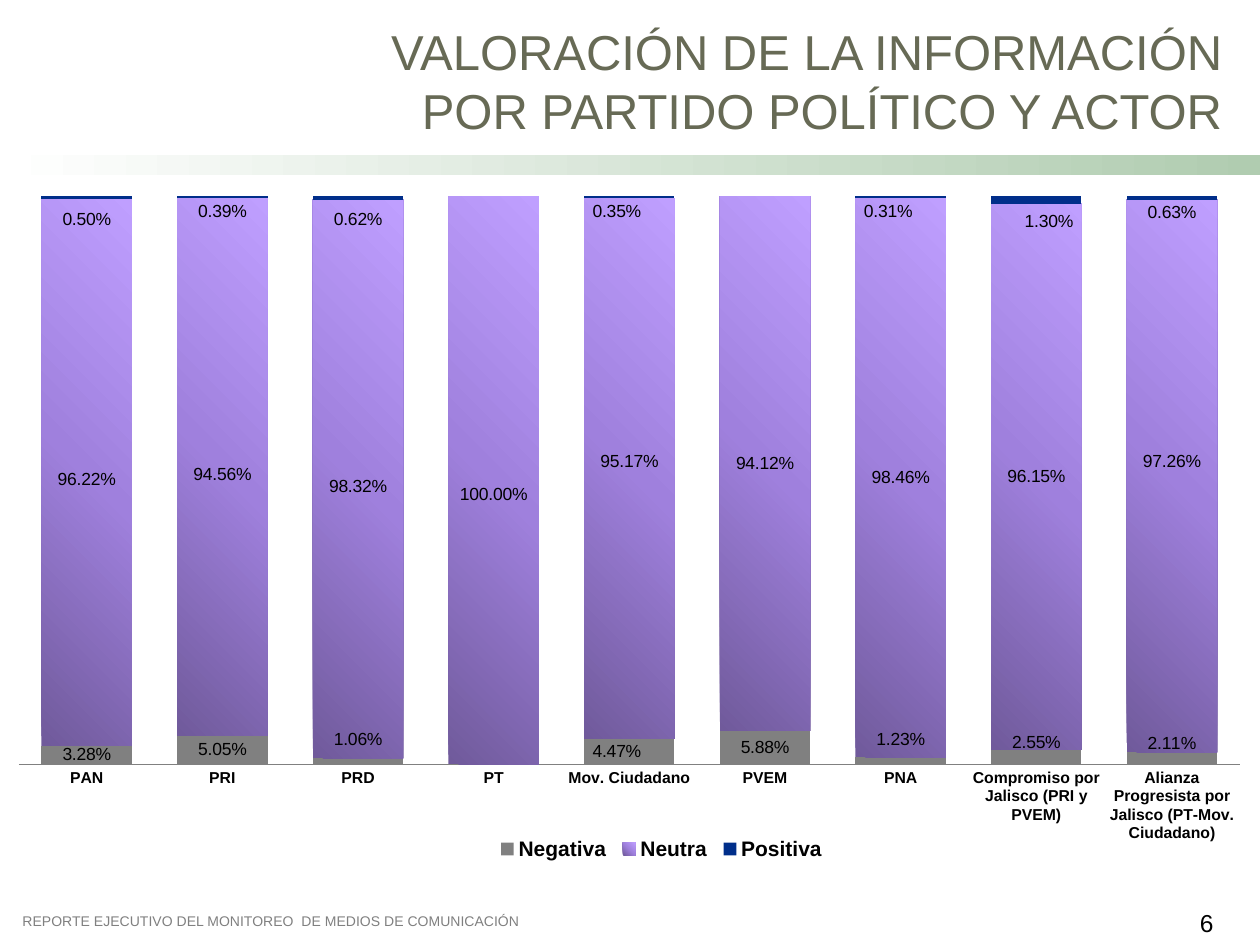
from lxml import etree
from pptx import Presentation
from pptx.chart.data import CategoryChartData
from pptx.dml.color import RGBColor
from pptx.enum.chart import XL_CHART_TYPE, XL_LEGEND_POSITION, XL_TICK_MARK
from pptx.enum.shapes import MSO_SHAPE
from pptx.enum.text import MSO_ANCHOR, PP_ALIGN
from pptx.oxml.ns import qn
from pptx.util import Inches, Pt

STACKED = XL_CHART_TYPE.COLUMN_STACKED_100
BOTTOM = XL_LEGEND_POSITION.BOTTOM
NO_TICK = XL_TICK_MARK.NONE
RECT = MSO_SHAPE.RECTANGLE
MIDDLE = MSO_ANCHOR.MIDDLE
LEFT, RIGHT = PP_ALIGN.LEFT, PP_ALIGN.RIGHT

FONT = "Arial"
PERCENT = "0.00%"
COLORS = {"title": "676A55", "text": "000000", "gray": "808080", "blue": "002E8A",
          "white": "FFFFFF", "green": "B0CCB0", "dark": "705A9B", "mid": "9F80DD",
          "light": "BF9FFF"}

PARTIES = ["PAN", "PRI", "PRD", "PT", "Mov. Ciudadano", "PVEM", "PNA",
           "Compromiso por Jalisco (PRI y PVEM)",
           "Alianza Progresista por Jalisco (PT-Mov. Ciudadano)"]
RATINGS = {
    "Negativa": [0.0328, 0.0505, 0.0106, None, 0.0447, 0.0588, 0.0123, 0.0255, 0.0211],
    "Neutra": [0.9622, 0.9456, 0.9832, 1, 0.9517, 0.9412, 0.9846, 0.9615, 0.9726],
    "Positiva": [0.005, 0.0039, 0.0062, None, 0.0035, None, 0.0031, 0.013, 0.0063],
}
LABEL_SHIFTS = {
    "Negativa": {2: (0, -0.03), 4: (-0.01, 0), 6: (0, -0.03), 7: (0, -0.02),
                 8: (0, -0.02)},
    "Neutra": {0: (0, 0.01), 1: (0, 0.01), 2: (0, 0.01), 3: (0, 0.02),
               4: (0, -0.01), 8: (0, -0.02)},
    "Positiva": {0: (0, 0.03), 1: (0, 0.02), 2: (0, 0.03), 4: (-0.01, 0.02),
                 6: (-0.01, 0.02), 7: (0.01, 0.03), 8: (0, 0.02)},
}


def rgb(name):
    return RGBColor.from_string(COLORS[name])


def set_layout(parent, after=None, **values):
    for old in parent.findall(qn("c:layout")):
        parent.remove(old)
    layout = etree.Element(qn("c:layout"))
    manual = etree.SubElement(layout, qn("c:manualLayout"))
    for tag, value in values.items():
        etree.SubElement(manual, qn(f"c:{tag}"), val=str(value))
    position = 0 if after is None else parent.index(parent.find(qn(after))) + 1
    parent.insert(position, layout)


class SlideBuilder:
    def __init__(self, slide):
        self.s = slide

    def style(self, font, size, color="text", bold=False):
        font.name, font.size, font.bold = FONT, Pt(size), bold
        font.color.rgb = rgb(color)

    def gradient(self, fill, element, names, angle):
        fill.gradient()
        fill.gradient_angle = angle
        stops = element.xpath(".//a:gsLst")[0]
        for old in list(stops):
            stops.remove(old)
        for i, name in enumerate(names):
            pos = 100000 * i // (len(names) - 1)
            stop = etree.SubElement(stops, qn("a:gs"), pos=str(pos))
            etree.SubElement(stop, qn("a:srgbClr"), val=COLORS[name])

    def title(self, text, *box):
        sp = self.s.shapes.title
        sp.left, sp.top, sp.width, sp.height = map(Inches, box)
        sp.text_frame.vertical_anchor = MIDDLE
        self.set_text(sp, text, 28, "title", RIGHT)

    def set_text(self, sp, text, size, color, align):
        tf = sp.text_frame
        tf.word_wrap = True
        tf.text = text
        p = tf.paragraphs[0]
        p.alignment = align
        self.style(p.runs[0].font, size, color)

    def text(self, text, box, size, color="text", align=LEFT):
        sp = self.s.shapes.add_textbox(*map(Inches, box))
        self.set_text(sp, text, size, color, align)

    def band(self, *box):
        sp = self.s.shapes.add_shape(RECT, *map(Inches, box))
        sp.shadow.inherit = False
        sp.line.fill.background()
        self.gradient(sp.fill, sp._element, ["white", "green"], 0)

    def labels(self, series):
        labels = series.data_labels
        labels.show_value = True
        labels.number_format = PERCENT
        labels.number_format_is_linked = False
        self.style(labels.font, 10)
        for i, (x, y) in LABEL_SHIFTS[series.name].items():
            self.style(series.points[i].data_label.font, 10)
            label = series._element.xpath(f"c:dLbls/c:dLbl[c:idx/@val='{i}']")[0]
            set_layout(label, "c:idx", x=x, y=y)

    def chart(self, *box):
        data = CategoryChartData(number_format=PERCENT)
        data.categories = PARTIES
        for name, values in RATINGS.items():
            data.add_series(name, values)
        chart = self.s.shapes.add_chart(STACKED, *map(Inches, box), data).chart
        self.style(chart.font, 18)
        chart.has_title = False

        plot = chart.plots[0]
        plot.gap_width, plot.overlap = 50, 100
        plot.vary_by_categories = False
        negative, neutral, positive = plot.series
        for series, color in ((negative, "gray"), (positive, "blue")):
            series.format.fill.solid()
            series.format.fill.fore_color.rgb = rgb(color)
        self.gradient(neutral.format.fill, neutral._element,
                      ["dark", "mid", "light"], 45)
        for series in plot.series:
            self.labels(series)

        categories, values = chart.category_axis, chart.value_axis
        categories.major_tick_mark = NO_TICK
        categories.format.line.color.rgb = rgb("gray")
        self.style(categories.tick_labels.font, 9, bold=True)
        values.has_major_gridlines = False
        values.minimum_scale, values.maximum_scale = 0, 1
        values.visible = False

        chart.has_legend = True
        legend = chart.legend
        legend.position = BOTTOM
        legend.include_in_layout = False
        self.style(legend.font, 12, bold=True)
        set_layout(legend._element, "c:legendPos", xMode="edge", yMode="edge",
                   x=0.39, y=0.91, w=0.27, h=0.05)
        set_layout(chart._chartSpace.xpath("c:chart/c:plotArea")[0],
                   layoutTarget="inner", xMode="edge", yMode="edge",
                   x=0.015, y=0.026, w=0.969, h=0.791)


def main():
    prs = Presentation()
    prs.slide_width, prs.slide_height = Inches(10), Inches(7.5)
    builder = SlideBuilder(prs.slides.add_slide(prs.slide_layouts[5]))
    builder.band(0, 1.23, 10, 0.16)
    builder.title("VALORACIÓN DE LA INFORMACIÓN POR PARTIDO POLÍTICO Y ACTOR",
                  2.24, 0.13, 7.56, 1.02)
    builder.text("6", (8.47, 7.16, 1.26, 0.29), 14, align=RIGHT)
    builder.chart(0, 1.41, 10, 5.7)
    builder.text("REPORTE EJECUTIVO DEL MONITOREO  DE MEDIOS DE COMUNICACIÓN",
                 (0.08, 7.19, 4.69, 0.24), 8, "gray")
    prs.save("out.pptx")


if __name__ == "__main__":
    main()
